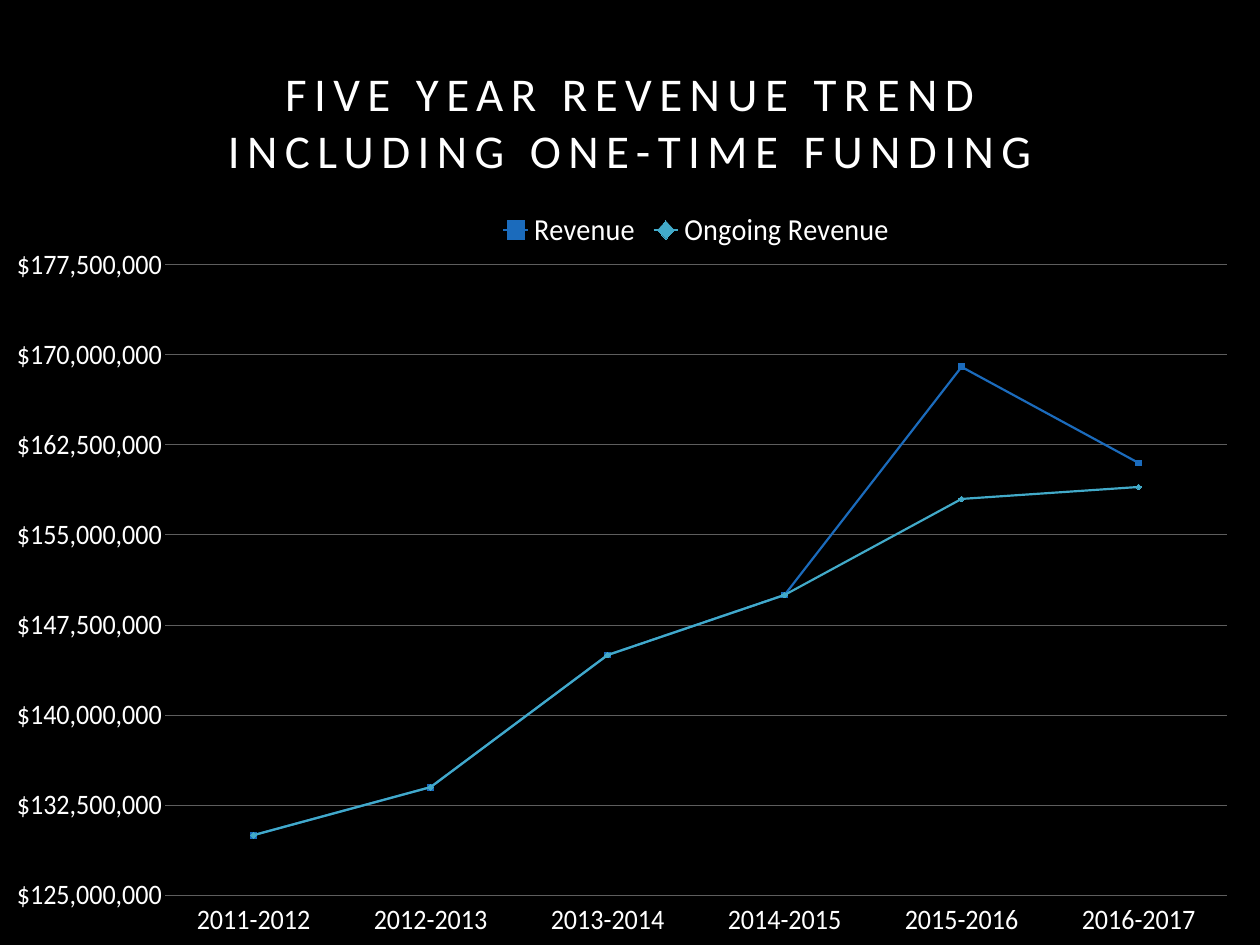
import dataclasses

import lxml.etree
import pptx
import pptx.chart.data
import pptx.dml.color
import pptx.enum.chart
import pptx.enum.text
import pptx.oxml
import pptx.oxml.ns
import pptx.util

BLACK = pptx.dml.color.RGBColor(0x00, 0x00, 0x00)
WHITE = pptx.dml.color.RGBColor(0xFF, 0xFF, 0xFF)
GRID_GREY = pptx.dml.color.RGBColor(0x5E, 0x5E, 0x5E)
BLUE = pptx.dml.color.RGBColor(0x1B, 0x6B, 0xBC)
TEAL = pptx.dml.color.RGBColor(0x42, 0xAA, 0xC9)
FONT_NAME = "Calibri"
SLIDE_WIDTH = pptx.util.Inches(14.22)
SLIDE_HEIGHT = pptx.util.Inches(10.67)
MILLION = 1_000_000
TITLE_LINES = ("FIVE YEAR REVENUE TREND", "INCLUDING ONE-TIME FUNDING")
FISCAL_YEARS = [f"{year}-{year + 1}" for year in range(2011, 2017)]


@dataclasses.dataclass(frozen=True)
class Area:
    """A rectangle given as shares of whatever contains it."""

    left: float
    top: float
    width: float
    height: float

    def on_slide(self) -> tuple[int, int, int, int]:
        """Return the rectangle as lengths on the slide."""
        return (
            int(self.left * SLIDE_WIDTH),
            int(self.top * SLIDE_HEIGHT),
            int(self.width * SLIDE_WIDTH),
            int(self.height * SLIDE_HEIGHT),
        )


@dataclasses.dataclass(frozen=True)
class RevenueLine:
    """One line of the chart, with values in millions of dollars."""

    name: str
    millions: tuple[int, ...]
    color: pptx.dml.color.RGBColor
    marker: pptx.enum.chart.XL_MARKER_STYLE


TITLE_AREA = Area(0.0506, 0.0628, 0.8987, 0.1462)
CHART_AREA = Area(0.0134, 0.2109, 0.9648, 0.7816)
PLOT_AREA = Area(0.005, 0.093, 0.99, 0.894)
LEGEND_AREA = Area(0.09, 0.0, 0.81, 0.08)
REVENUE_LINES = (
    RevenueLine("Revenue", (130, 134, 145, 150, 169, 161), BLUE,
                pptx.enum.chart.XL_MARKER_STYLE.SQUARE),
    RevenueLine("Ongoing Revenue", (130, 134, 145, 150, 158, 159), TEAL,
                pptx.enum.chart.XL_MARKER_STYLE.DIAMOND),
)


def style_font(font: pptx.text.text.Font, size: float) -> None:
    """Give a font the slide's typeface and colour."""
    font.name = FONT_NAME
    font.size = pptx.util.Pt(size)
    font.bold = False
    font.color.rgb = WHITE


def make_layout(area: Area, inner: bool = False) -> lxml.etree._Element:
    """Return a manual chart layout for an area."""
    layout = pptx.oxml.parse_xml(
        f'<c:layout {pptx.oxml.ns.nsdecls("c")}><c:manualLayout/></c:layout>'
    )
    settings = [("layoutTarget", "inner")] if inner else []
    settings += [("xMode", "edge"), ("yMode", "edge"), ("x", area.left),
                 ("y", area.top), ("w", area.width), ("h", area.height)]
    for tag, value in settings:
        lxml.etree.SubElement(layout[0], pptx.oxml.ns.qn(f"c:{tag}"), val=str(value))
    return layout


def draw_title(slide: pptx.slide.Slide) -> None:
    """Place the two-line, letter-spaced title."""
    title = slide.shapes.title
    title.left, title.top, title.width, title.height = TITLE_AREA.on_slide()
    frame = title.text_frame
    frame.text = "\n".join(TITLE_LINES)
    frame.word_wrap = True
    frame.auto_size = pptx.enum.text.MSO_AUTO_SIZE.NONE
    frame.vertical_anchor = pptx.enum.text.MSO_ANCHOR.TOP
    for side in ("left", "top", "right", "bottom"):
        setattr(frame, f"margin_{side}", pptx.util.Inches(0.06))
    for paragraph in frame.paragraphs:
        paragraph.alignment = pptx.enum.text.PP_ALIGN.CENTER
        paragraph.line_spacing = 1.0
        paragraph.space_before = pptx.util.Pt(0)
        style_font(paragraph.font, 38.2)
        for run in paragraph.runs:
            run._r.get_or_add_rPr().set("spc", "610")


def style_axes(chart: pptx.chart.chart.Chart) -> None:
    """Set the scale, labels and gridlines."""
    for axis in (chart.category_axis, chart.value_axis):
        axis.major_tick_mark = pptx.enum.chart.XL_TICK_MARK.NONE
        axis.minor_tick_mark = pptx.enum.chart.XL_TICK_MARK.NONE
        axis.format.line.fill.background()
        style_font(axis.tick_labels.font, 24)
    chart.category_axis.tick_label_position = pptx.enum.chart.XL_TICK_LABEL_POSITION.LOW
    dollars = chart.value_axis
    dollars.minimum_scale = 125 * MILLION
    dollars.maximum_scale = 177.5 * MILLION
    dollars.major_unit = 7.5 * MILLION
    dollars.tick_labels.number_format = '"$"#,##0'
    dollars.tick_labels.number_format_is_linked = False
    dollars.has_major_gridlines = True
    dollars.major_gridlines.format.line.color.rgb = GRID_GREY
    dollars.major_gridlines.format.line.width = pptx.util.Pt(1)


def style_legend(chart: pptx.chart.chart.Chart) -> None:
    """Spread the legend above the plot."""
    chart.has_legend = True
    legend = chart.legend
    legend.position = pptx.enum.chart.XL_LEGEND_POSITION.TOP
    legend.include_in_layout = True
    style_font(legend.font, 26)
    legend._element.find(pptx.oxml.ns.qn("c:legendPos")).addnext(make_layout(LEGEND_AREA))


def draw_chart(slide: pptx.slide.Slide) -> None:
    """Add the revenue line chart."""
    data = pptx.chart.data.CategoryChartData(number_format='"$"#,##0')
    data.categories = FISCAL_YEARS
    for line in REVENUE_LINES:
        data.add_series(line.name, [value * MILLION for value in line.millions])
    chart = slide.shapes.add_chart(
        pptx.enum.chart.XL_CHART_TYPE.LINE_MARKERS, *CHART_AREA.on_slide(), data
    ).chart
    chart.has_title = False
    style_font(chart.font, 10)
    chart.plots[0].vary_by_categories = False
    for series, line in zip(chart.plots[0].series, REVENUE_LINES):
        series.smooth = False
        series.format.line.color.rgb = line.color
        series.format.line.width = pptx.util.Pt(2)
        series.marker.style = line.marker
        series.marker.size = 5
        series.marker.format.fill.solid()
        series.marker.format.fill.fore_color.rgb = line.color
        series.marker.format.line.color.rgb = line.color
    style_axes(chart)
    style_legend(chart)
    plot_area = chart._chartSpace.chart.plotArea
    for layout in plot_area.findall(pptx.oxml.ns.qn("c:layout")):
        plot_area.remove(layout)
    plot_area.insert(0, make_layout(PLOT_AREA, inner=True))


def main() -> None:
    """Build and save the slide."""
    presentation = pptx.Presentation()
    presentation.slide_width = SLIDE_WIDTH
    presentation.slide_height = SLIDE_HEIGHT
    slide = presentation.slides.add_slide(presentation.slide_layouts.get_by_name("Title Only"))
    slide.background.fill.solid()
    slide.background.fill.fore_color.rgb = BLACK
    draw_title(slide)
    draw_chart(slide)
    presentation.save("out.pptx")


if __name__ == "__main__":
    main()
